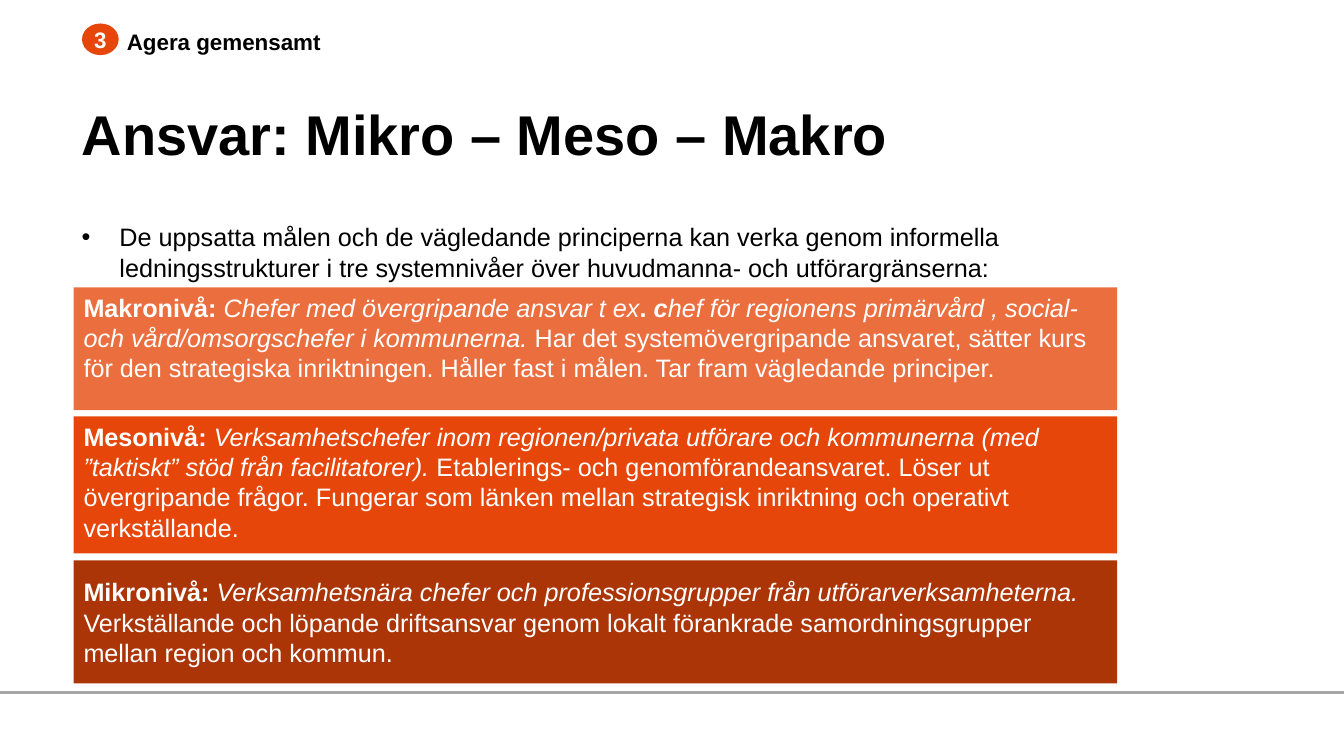
from pptx import Presentation
from pptx.util import Inches, Pt
from pptx.dml.color import RGBColor
from pptx.enum import shapes, text
from pptx.oxml import ns
from lxml import etree

COLORS = {"orange": "E6460A", "dark": "AC3508", "rule": "A6A6A6",
          "black": "000000", "white": "FFFFFF"}
LEFT, WIDTH = 0.73, 10.35

# Each level: top, height, fill, opacity in percent, anchor, paragraphs of (text, style)
TOP, MID = text.MSO_ANCHOR.TOP, text.MSO_ANCHOR.MIDDLE
LEVELS = [
    (2.85, 1.22, "orange", 78, TOP, [[
        ("Makronivå: ", "b"),
        ("Chefer med övergripande ansvar t ex", "i"),
        (". ", "b"),
        ("c", "bi"),
        ("hef för regionens primärvård , social- och vård/omsorgschefer "
         "i kommunerna. ", "i"),
        ("Har det systemövergripande ansvaret, sätter kurs för den strategiska "
         "inriktningen. Håller fast i målen. Tar fram vägledande principer.", "")]]),
    (4.13, 1.36, "orange", 100, TOP, [[
        ("Mesonivå: ", "b"),
        ("Verksamhetschefer inom regionen/privata utförare och kommunerna "
         "(med ”taktiskt” stöd från facilitatorer). ", "i"),
        ("Etablerings- och genomförandeansvaret. Löser ut övergripande frågor. "
         "Fungerar som länken mellan strategisk inriktning och operativt "
         "verkställande.", "")]]),
    (5.56, 1.22, "dark", 100, MID, [
        [("Mikronivå: ", "b"),
         ("Verksamhetsnära chefer och professionsgrupper från "
          "utförarverksamheterna.", "i")],
        [("Verkställande och löpande driftsansvar genom lokalt förankrade "
          "samordningsgrupper mellan region och kommun.", "")]]),
]


def color(name):
    return RGBColor.from_string(COLORS[name])


def style(run, size, ink, bold=False, italic=False):
    font = run.font
    font.name, font.size = "Arial", Pt(size)
    font.bold, font.italic = bold, italic
    font.color.rgb = color(ink)


def write(shape, words, size, ink="black", bold=False, space=1.0,
          align=text.PP_ALIGN.LEFT, anchor=TOP, wrap=True):
    frame = shape.text_frame
    frame.text = words
    frame.word_wrap, frame.vertical_anchor = wrap, anchor
    frame.auto_size = text.MSO_AUTO_SIZE.NONE
    para = frame.paragraphs[0]
    para.alignment, para.line_spacing = align, space
    para.space_before = Pt(0)
    style(para.runs[0], size, ink, bold)


def place(shape, x, y, w, h):
    shape.left, shape.top = Inches(x), Inches(y)
    shape.width, shape.height = Inches(w), Inches(h)


def add_form(slide, kind, fill, x, y, w, h):
    form = slide.shapes.add_shape(kind, Inches(x), Inches(y), Inches(w), Inches(h))
    form.shadow.inherit = False
    form.fill.solid()
    form.fill.fore_color.rgb = color(fill)
    form.line.fill.background()
    return form


def add_level(slide, top, height, fill, alpha, anchor, paras):
    box = add_form(slide, shapes.MSO_SHAPE.RECTANGLE, fill, LEFT, top, WIDTH, height)
    if alpha < 100:
        tint = box.fill._xPr.find(".//" + ns.qn("a:srgbClr"))
        etree.SubElement(tint, ns.qn("a:alpha")).set("val", str(alpha * 1000))
    frame = box.text_frame
    frame.word_wrap, frame.vertical_anchor = True, anchor
    for i, parts in enumerate(paras):
        para = frame.add_paragraph() if i else frame.paragraphs[0]
        para.alignment = text.PP_ALIGN.LEFT
        for words, marks in parts:
            run = para.add_run()
            run.text = words
            style(run, 18, "white", "b" in marks, "i" in marks)


def add_rule(slide, y):
    rule = slide.shapes.add_connector(shapes.MSO_CONNECTOR.STRAIGHT,
                                      0, Inches(y), Inches(13.33), Inches(y))
    rule.line.color.rgb = color("rule")
    rule.line.width = Pt(1.5)
    etree.SubElement(rule._element.spPr, ns.qn("a:effectLst"))


def main():
    deck = Presentation()
    deck.slide_width, deck.slide_height = Inches(13.33), Inches(7.5)
    slide = deck.slides.add_slide(deck.slide_layouts[1])
    add_rule(slide, 6.87)

    # Title and introduction
    title, intro = slide.placeholders
    place(title, 0.71, 1.07, 10.51, 1.22)
    write(title, "Ansvar: Mikro – Meso – Makro", 40, bold=True, space=0.8)
    place(intro, 0.71, 2.15, 9.98, 1.01)
    props = intro.text_frame.paragraphs[0]._p.get_or_add_pPr()
    props.set("marL", "0")
    props.set("indent", "0")
    etree.SubElement(props, ns.qn("a:buNone"))
    write(intro, "De uppsatta målen och de vägledande principerna kan verka genom "
          "informella ledningsstrukturer i tre systemnivåer över huvudmanna- och "
          "utförargränserna:", 18)

    # Section label with its number
    label = slide.shapes.add_textbox(Inches(1.16), Inches(0.28),
                                     Inches(10.51), Inches(0.56))
    write(label, "Agera gemensamt", 16, bold=True, space=0.8)
    badge = add_form(slide, shapes.MSO_SHAPE.OVAL, "orange", 0.82, 0.24, 0.35, 0.3)
    badge.line.color.rgb = color("orange")
    badge.line.width = Pt(1)
    write(badge, "3", 16, "white", True, align=text.PP_ALIGN.CENTER,
          anchor=MID, wrap=False)

    # System levels
    for level in LEVELS:
        add_level(slide, *level)

    deck.save("out.pptx")


if __name__ == "__main__":
    main()
